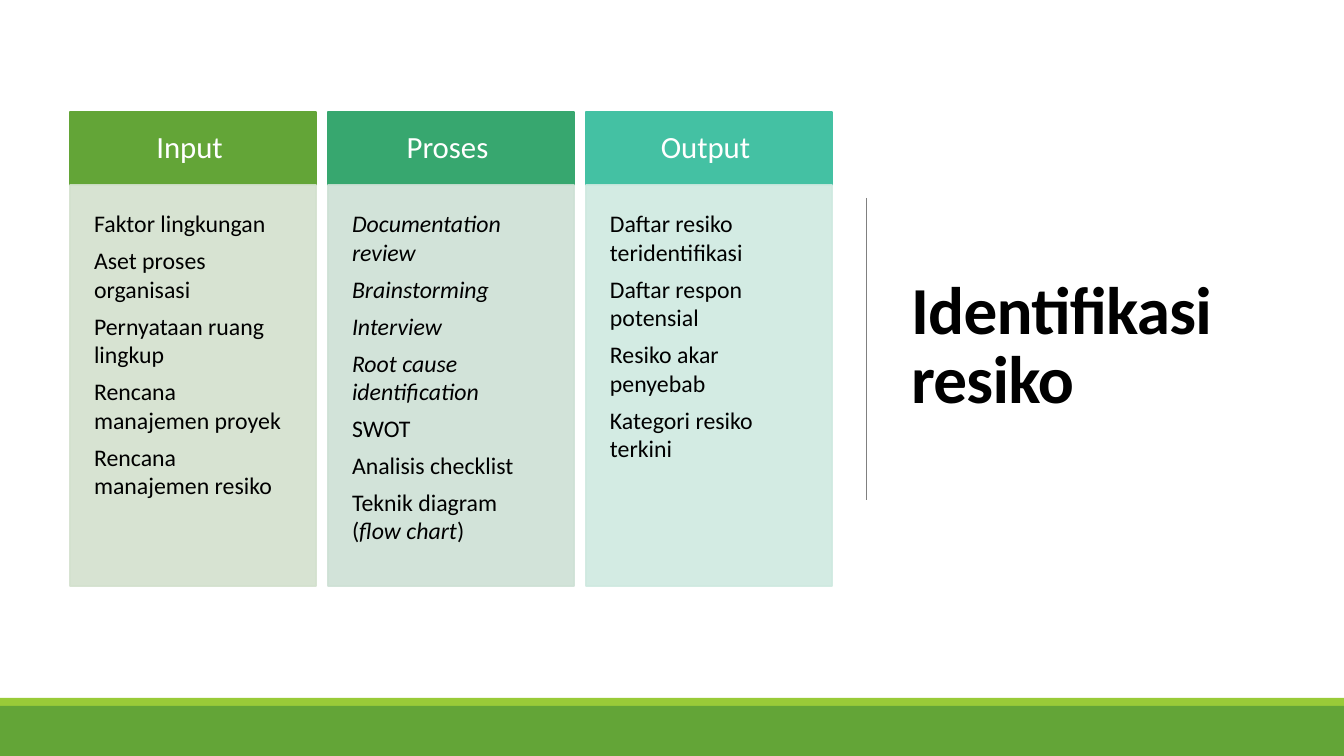
import lxml.etree
import pptx
import pptx.dml.color
import pptx.enum.shapes
import pptx.enum.text
import pptx.oxml.ns
import pptx.util
from dataclasses import dataclass

PX = 914400 / 100.8  # EMU in one pixel


@dataclass(frozen=True)
class Theme:
    font: str = "Calibri"
    black: str = "000000"
    white: str = "FFFFFF"
    gray: str = "808080"
    lime: str = "99CB38"
    green: str = "63A537"
    emerald: str = "37A76F"
    teal: str = "44C1A3"
    pale_green: str = "D3E1CE"
    pale_emerald: str = "CEE1D5"
    pale_teal: str = "CFE9E0"
    title_size: int = 48
    heading_size: int = 22
    body_size: int = 17


theme = Theme()
align = pptx.enum.text.PP_ALIGN
anchors = pptx.enum.text.MSO_ANCHOR
rgb = pptx.dml.color.RGBColor.from_string
qn = pptx.oxml.ns.qn


def write_text(shape, lines, size, color, alignment=align.LEFT, anchor=anchors.TOP,
               inset=10, inset_y=5, line_spacing=1.0, space_after=0.0, bold=False, tracking=0):
    """Write one paragraph per line; parts between asterisks are italic."""
    frame = shape.text_frame
    frame.word_wrap = True
    frame.auto_size = pptx.enum.text.MSO_AUTO_SIZE.NONE
    frame.vertical_anchor = anchor
    frame.margin_left = frame.margin_right = round(inset * PX)
    frame.margin_top = frame.margin_bottom = round(inset_y * PX)
    for index, line in enumerate(lines):
        paragraph = frame.add_paragraph() if index else frame.paragraphs[0]
        paragraph.alignment = alignment
        paragraph.line_spacing = line_spacing
        paragraph.space_before = pptx.util.Pt(0)
        paragraph.space_after = pptx.util.Pt(space_after)
        for part_index, part in enumerate(line.split("*")):
            if not part:
                continue
            run = paragraph.add_run()
            run.text = part
            run.font.name = theme.font
            run.font.size = pptx.util.Pt(size)
            run.font.color.rgb = rgb(color)
            run.font.bold = bold
            run.font.italic = part_index % 2 == 1
            if tracking:
                run._r.get_or_add_rPr().set("spc", str(tracking))


def add_rectangle(left, top, width, height, color, outlined=False, opacity=100):
    shape = slide.shapes.add_shape(pptx.enum.shapes.MSO_SHAPE.RECTANGLE,
                                   *(round(n * PX) for n in (left, top, width, height)))
    shape.shadow.inherit = False
    shape.fill.solid()
    shape.fill.fore_color.rgb = rgb(color)
    if outlined:
        shape.line.color.rgb = rgb(color)
        shape.line.width = pptx.util.Pt(1.25)
    else:
        shape.line.fill.background()
    if opacity < 100:
        for color_element in list(shape._element.spPr.iter(qn("a:srgbClr"))):
            lxml.etree.SubElement(color_element, qn("a:alpha"), val=str(opacity * 1000))
    return shape


presentation = pptx.Presentation()
presentation.slide_width = round(1344 * PX)
presentation.slide_height = round(756 * PX)
slide = presentation.slides.add_slide(presentation.slide_layouts.get_by_name("Title Only"))

# Title on the right
title = slide.shapes.title
title.left, title.top, title.width, title.height = (round(n * PX) for n in (901, 70, 372, 557))
write_text(title, ["Identifikasi resiko"], theme.title_size, theme.black,
           anchor=anchors.MIDDLE, line_spacing=0.85, bold=True, tracking=-50)

# Divider between columns and title
divider = slide.shapes.add_connector(pptx.enum.shapes.MSO_CONNECTOR.STRAIGHT,
                                     *(round(n * PX) for n in (866, 198, 866, 500)))
divider.line.color.rgb = rgb(theme.gray)
divider.line.width = pptx.util.Pt(0.5)
lxml.etree.SubElement(divider._element.spPr, qn("a:effectLst"))

# Footer bands
add_rectangle(0, 698, 1344, 8, theme.lime)
add_rectangle(0, 706, 1344, 50, theme.green)

# Columns: heading, heading colour, body colour, items
columns = [
    ("Input ", theme.green, theme.pale_green, [
        "Faktor lingkungan", "Aset proses organisasi", "Pernyataan ruang lingkup",
        "Rencana manajemen proyek", "Rencana manajemen resiko"]),
    ("Proses ", theme.emerald, theme.pale_emerald, [
        "*Documentation review*", "*Brainstorming*", "*Interview*",
        "*Root cause identification*", "SWOT", "Analisis checklist",
        "Teknik diagram (*flow chart*)"]),
    ("Output ", theme.teal, theme.pale_teal, [
        "Daftar resiko teridentifikasi", "Daftar respon potensial",
        "Resiko akar penyebab", "Kategori resiko terkini"]),
]
for index, (heading, heading_color, body_color, items) in enumerate(columns):
    left = 70 + 258 * index
    header = add_rectangle(left, 112, 246, 73, heading_color, outlined=True)
    write_text(header, [heading], theme.heading_size, theme.white, align.CENTER,
               anchors.MIDDLE, inset=19, inset_y=19, line_spacing=0.9)
    body = add_rectangle(left, 185, 246, 401, body_color, outlined=True, opacity=90)
    write_text(body, items, theme.body_size, theme.black, inset=24, inset_y=24,
               space_after=0.35 * theme.body_size)

presentation.save("out.pptx")
